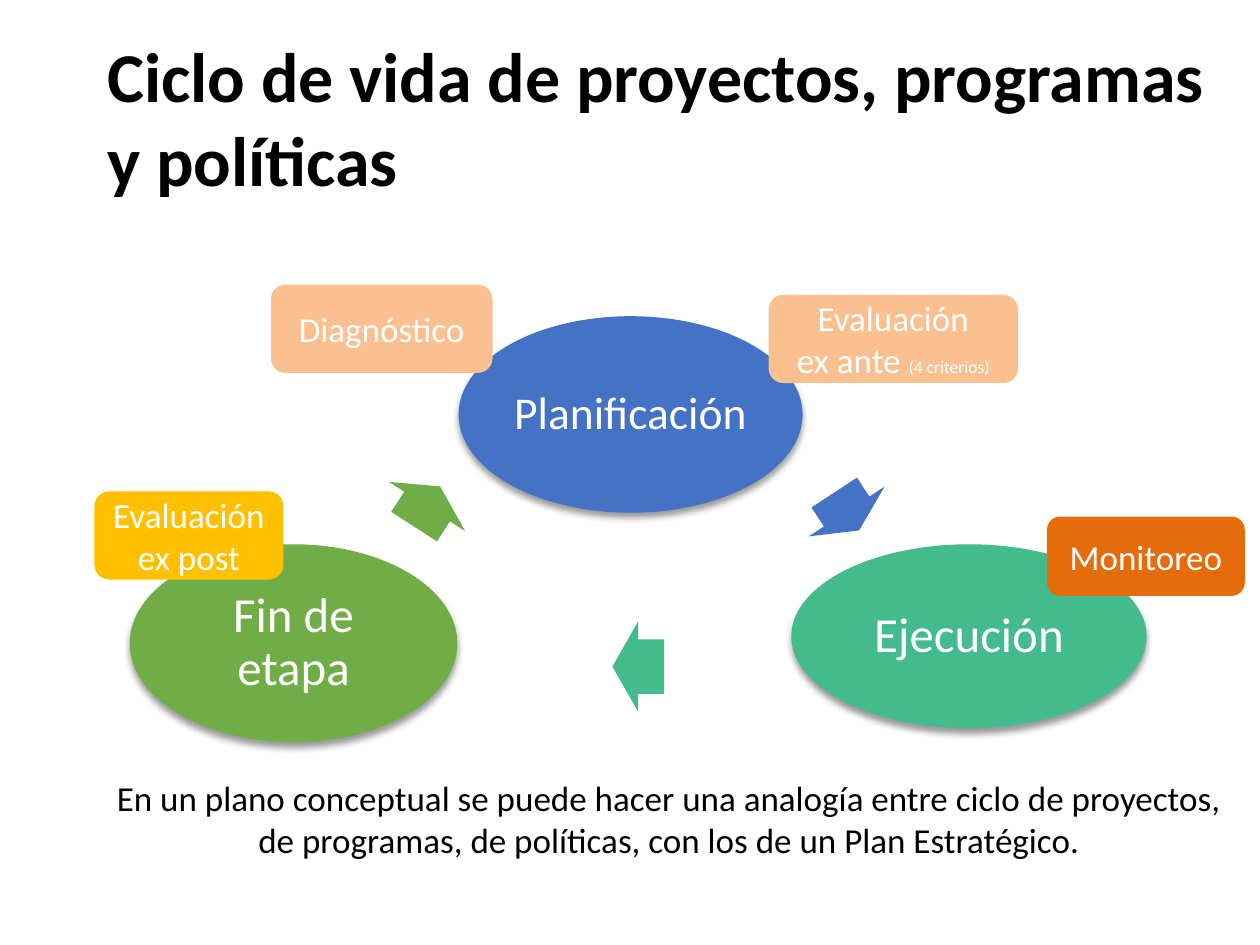
from lxml.etree import SubElement
from pptx import Presentation
from pptx.dml.color import RGBColor
from pptx.enum.shapes import MSO_SHAPE
from pptx.enum.text import MSO_ANCHOR, PP_ALIGN
from pptx.oxml.ns import qn
from pptx.util import Inches, Pt

FONT = "Calibri"
BLACK = RGBColor(0x00, 0x00, 0x00)
WHITE = RGBColor(0xFF, 0xFF, 0xFF)
BLUE = RGBColor(0x44, 0x72, 0xC4)
TEAL = RGBColor(0x43, 0xBB, 0x8D)
GREEN = RGBColor(0x70, 0xAD, 0x47)
PEACH = RGBColor(0xFA, 0xC0, 0x90)
ORANGE = RGBColor(0xE4, 0x6C, 0x0A)
AMBER = RGBColor(0xFF, 0xC0, 0x00)

TITLE = "Ciclo de vida de proyectos, programas y políticas"
CAPTION = ("En un plano conceptual se puede hacer una analogía entre ciclo de "
           "proyectos, de programas, de políticas, con los de un Plan Estratégico.")

# Positions are left, top, width, height in inches.
STAGES = [
    ("Planificación", 26, BLUE, (3.64, 2.51, 2.73, 1.56)),
    ("Ejecución", 28, TEAL, (6.28, 4.32, 2.82, 1.46)),
    ("Fin de etapa", 28, GREEN, (1.03, 4.32, 2.6, 1.57)),
]
ARROWS = [
    (BLUE, 56.7, (6.54, 3.7, 0.36, 0.72)),
    (TEAL, 180, (4.86, 4.93, 0.41, 0.72)),
    (GREEN, 302.9, (3.2, 3.66, 0.38, 0.72)),
]
# Each label is a list of lines; each line is a list of (text, size) spans.
LABELS = [
    ([[("Evaluación", 20)], [("ex ante ", 20), ("(4 criterios)", 10)]],
     PEACH, (6.1, 2.34, 1.98, 0.7)),
    ([[("Monitoreo", 20)]], ORANGE, (8.31, 4.1, 1.57, 0.63)),
    ([[("Evaluación", 20)], [("ex post", 20)]], AMBER, (0.75, 3.9, 1.5, 0.7)),
    ([[("Diagnóstico", 20)]], PEACH, (2.15, 2.26, 1.76, 0.7)),
]


def write(box, lines, color=WHITE, bold=False, align=PP_ALIGN.CENTER,
          anchor=MSO_ANCHOR.MIDDLE, spacing=None, inset=None):
    """Fill a shape with lines, each a list of (text, size) spans."""
    frame = box.text_frame
    frame.word_wrap = True
    frame.vertical_anchor = anchor
    if inset is not None:
        frame.margin_left = frame.margin_right = Inches(inset)
        frame.margin_top = frame.margin_bottom = Inches(inset)
    for index, line in enumerate(lines):
        para = frame.add_paragraph() if index else frame.paragraphs[0]
        para.alignment = align
        if spacing:
            para.line_spacing = spacing
        for text, size in line:
            span = para.add_run()
            span.text = text
            span.font.name = FONT
            span.font.size = Pt(size)
            span.font.bold = bold
            span.font.color.rgb = color


def add_filled(page, kind, position, color):
    shape = page.shapes.add_shape(kind, *map(Inches, position))
    shape.shadow.inherit = False
    shape.fill.solid()
    shape.fill.fore_color.rgb = color
    shape.line.fill.background()
    return shape


def add_drop_shadow(shape):
    effects = shape.element.spPr.find(qn("a:effectLst"))
    shadow = SubElement(effects, qn("a:outerShdw"), blurRad=str(Pt(4)),
                        dist=str(Pt(3)), dir=str(90 * 60000), rotWithShape="0")
    color = SubElement(shadow, qn("a:srgbClr"), val="000000")
    SubElement(color, qn("a:alpha"), val="40000")


def main():
    deck = Presentation()
    deck.slide_width, deck.slide_height = Inches(10), Inches(7.5)
    page = deck.slides.add_slide(deck.slide_layouts[5])

    title = page.shapes.title
    title.left, title.top = Inches(0.75), Inches(0.3)
    title.width, title.height = Inches(9.25), Inches(1.25)
    write(title, [[(TITLE, 40)]], color=BLACK, bold=True, align=PP_ALIGN.LEFT)

    for name, size, color, position in STAGES:
        stage = add_filled(page, MSO_SHAPE.OVAL, position, color)
        add_drop_shadow(stage)
        write(stage, [[(name, size)]], spacing=0.9, inset=0.02)

    for color, angle, position in ARROWS:
        arrow = add_filled(page, MSO_SHAPE.RIGHT_ARROW, position, color)
        arrow.adjustments[0] = 0.6
        arrow.adjustments[1] = 0.5
        arrow.rotation = angle

    for lines, color, position in LABELS:
        label = add_filled(page, MSO_SHAPE.ROUNDED_RECTANGLE, position, color)
        write(label, lines)

    caption = page.shapes.add_textbox(*map(Inches, (0.78, 6.11, 9.06, 0.77)))
    write(caption, [[(CAPTION, 20)]], color=BLACK, anchor=MSO_ANCHOR.TOP)

    deck.save("out.pptx")


if __name__ == "__main__":
    main()
